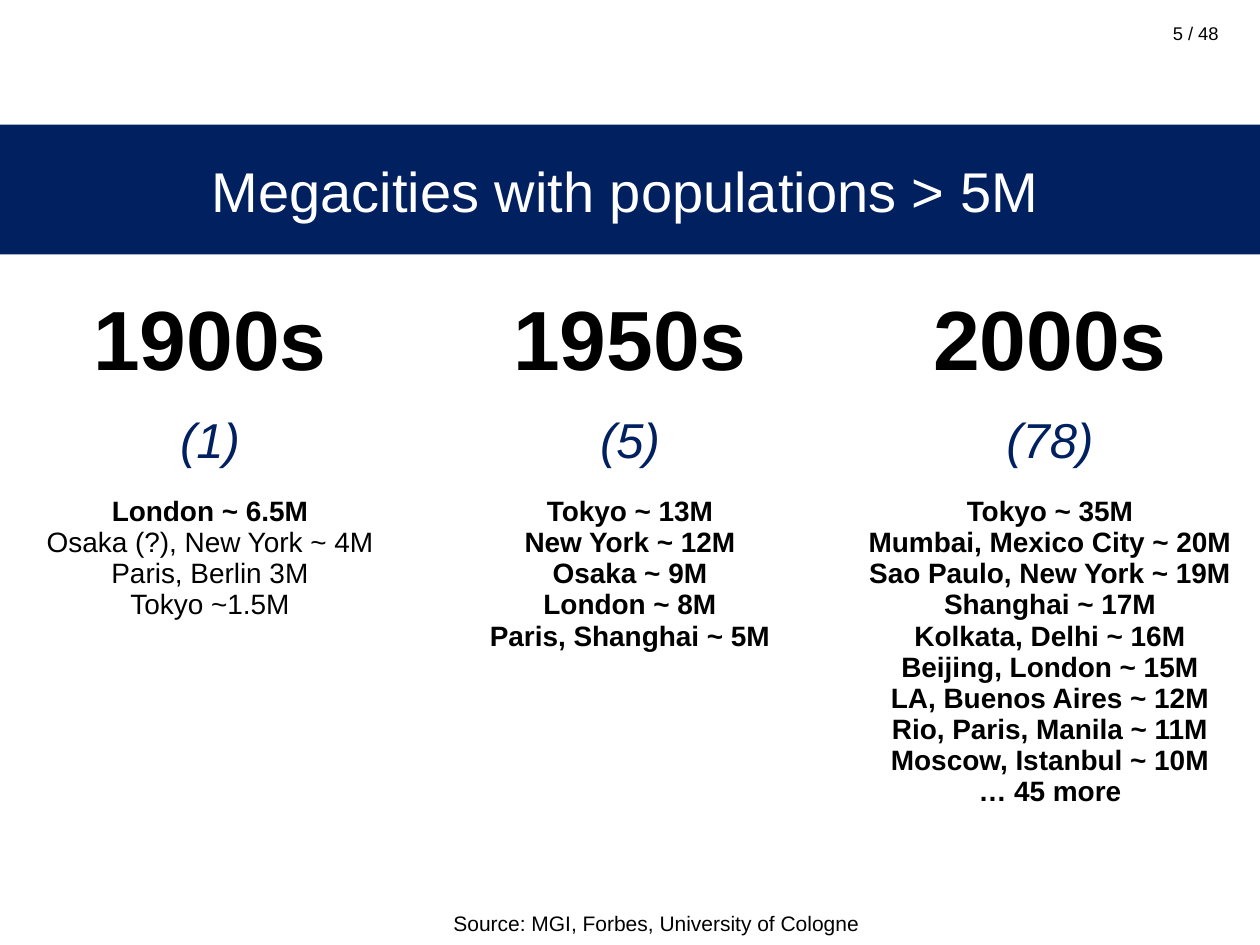
from pptx import Presentation
from pptx.dml.color import RGBColor
from pptx.enum.shapes import MSO_SHAPE
from pptx.enum.text import MSO_ANCHOR, PP_ALIGN
from pptx.util import Inches, Pt

COLORS = {"navy": "002060", "white": "FFFFFF", "black": "000000"}

ERAS = [
    ("1900s", "(1)", ["London ~ 6.5M", "Osaka (?), New York ~ 4M", "Paris, Berlin 3M",
                      "Tokyo ~1.5M"]),
    ("1950s", "(5)", ["Tokyo ~ 13M", "New York ~ 12M", "Osaka ~ 9M", "London ~ 8M",
                      "Paris, Shanghai ~ 5M"]),
    ("2000s", "(78)", ["Tokyo ~ 35M", "Mumbai, Mexico City ~ 20M",
                       "Sao Paulo, New York ~ 19M", "Shanghai ~ 17M",
                       "Kolkata, Delhi ~ 16M", "Beijing, London ~ 15M",
                       "LA, Buenos Aires ~ 12M", "Rio, Paris, Manila ~ 11M",
                       "Moscow, Istanbul ~ 10M", "… 45 more"]),
]
BELOW_THRESHOLD = {"Osaka (?), New York ~ 4M", "Paris, Berlin 3M", "Tokyo ~1.5M"}
ROW_HEIGHTS = [1.06, 0.65, 3.04]


class SlideBuilder:
    """Holds the style and the current slide, and adds elements to it."""

    def __init__(self, prs, font="Arial"):
        self.font = font
        self.s = prs.slides.add_slide(prs.slide_layouts[6])

    def color(self, name):
        return RGBColor.from_string(COLORS[name])

    def add_lines(self, tf, lines, size, color="black", align=PP_ALIGN.CENTER,
                  bold=False, italic=False, light=()):
        for i, line in enumerate(lines):
            p = tf.paragraphs[0] if i == 0 else tf.add_paragraph()
            p.alignment = align
            r = p.add_run()
            r.text = line
            r.font.name = self.font
            r.font.size = Pt(size)
            r.font.bold = bold and line not in light
            r.font.italic = italic
            r.font.color.rgb = self.color(color)

    def band(self, x, y, w, h, color):
        sp = self.s.shapes.add_shape(MSO_SHAPE.RECTANGLE, Inches(x), Inches(y),
                                     Inches(w), Inches(h))
        sp.shadow.inherit = False
        sp.fill.solid()
        sp.fill.fore_color.rgb = self.color(color)
        sp.line.fill.background()

    def text(self, x, y, w, h, line, size, wrap=True, anchor=MSO_ANCHOR.TOP, **style):
        sp = self.s.shapes.add_textbox(Inches(x), Inches(y), Inches(w), Inches(h))
        tf = sp.text_frame
        tf.word_wrap = wrap
        tf.vertical_anchor = anchor
        self.add_lines(tf, [line], size, **style)

    def table(self, x, y, w, eras, heights):
        table = self.s.shapes.add_table(len(heights), len(eras), Inches(x), Inches(y),
                                        Inches(w), Inches(sum(heights))).table
        table.first_row = table.horz_banding = False
        for row, height in zip(table.rows, heights):
            row.height = Inches(height)
        for cell in table.iter_cells():
            cell.fill.background()
        for col, (era, count, cities) in enumerate(eras):
            head, total, body = (table.cell(row, col) for row in range(3))
            head.vertical_anchor = MSO_ANCHOR.MIDDLE
            self.add_lines(head.text_frame, [era], 48, bold=True)
            self.add_lines(total.text_frame, [count], 28, "navy", italic=True)
            self.add_lines(body.text_frame, cities, 16, bold=True, light=BELOW_THRESHOLD)


def main():
    prs = Presentation()
    prs.slide_width, prs.slide_height = Inches(10), Inches(7.5)
    slide = SlideBuilder(prs)
    slide.band(0, 0.99, 10, 1.03, "navy")
    slide.text(9.21, 0.13, 0.79, 0.29, "5 / 48", 10.5, align=PP_ALIGN.LEFT)
    slide.text(0.2, 0.99, 9.53, 1.03, "Megacities with populations > 5M", 32,
               anchor=MSO_ANCHOR.MIDDLE, color="white")
    slide.table(0, 2.18, 10, ERAS, ROW_HEIGHTS)
    slide.text(3.5, 7.18, 3.45, 0.3, "Source: MGI, Forbes, University of Cologne", 12,
               wrap=False, align=PP_ALIGN.LEFT)
    prs.save("out.pptx")


if __name__ == "__main__":
    main()
